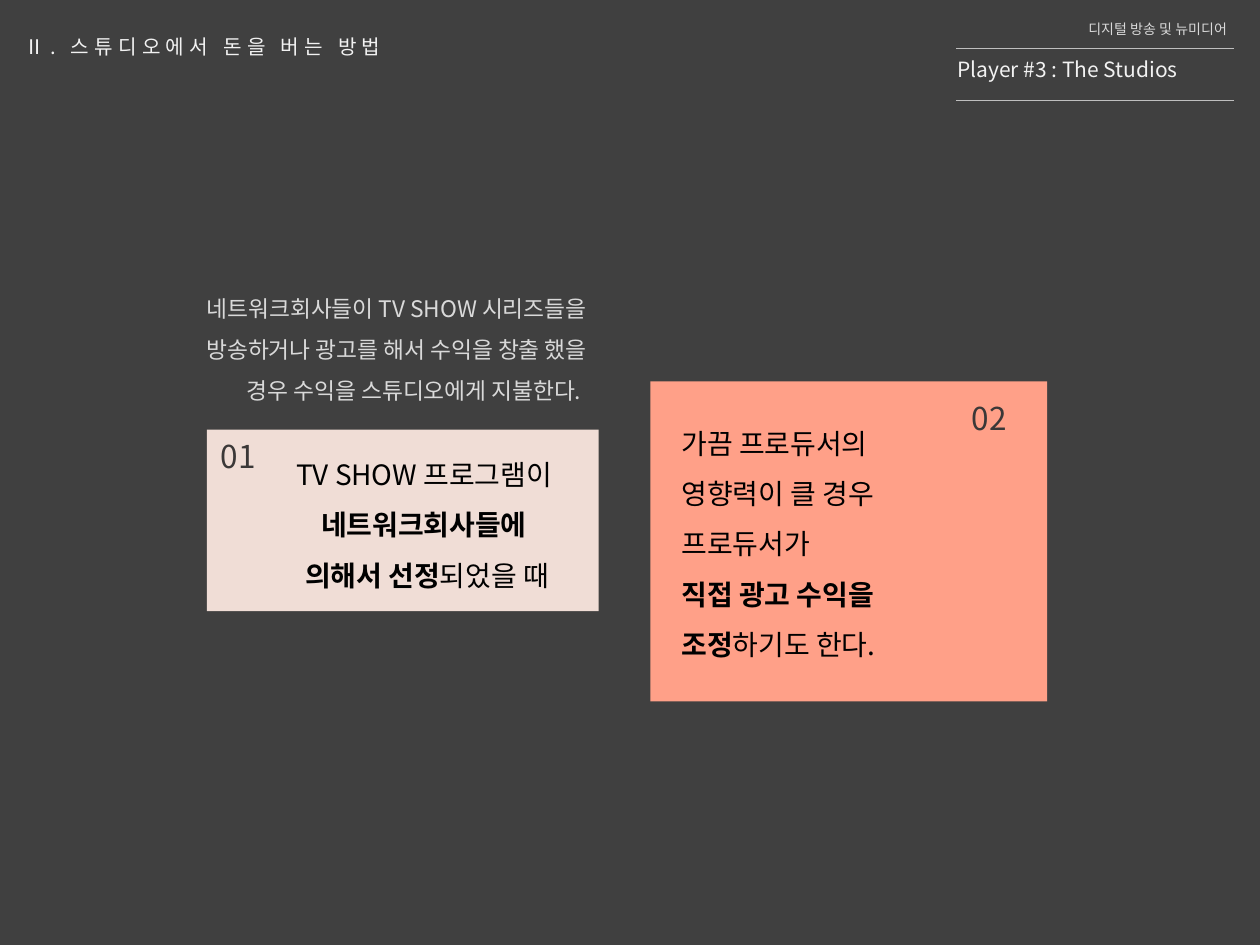
from pptx import Presentation
from pptx.dml.color import RGBColor
from pptx.enum.shapes import MSO_CONNECTOR as Link, MSO_SHAPE as Kind
from pptx.enum.text import MSO_AUTO_SIZE as Fit, PP_ALIGN as Align
from pptx.oxml.ns import qn
from pptx.util import Cm, Pt
from lxml.etree import SubElement

FACE = "Noto Sans CJK KR"


def paint(hue):
    return RGBColor.from_string(hue)


def write(spot, lines, size, hue, align=Align.LEFT, gap=None, wrap=True, track=0):
    frame = slide.shapes.add_textbox(*map(Cm, spot)).text_frame
    frame.word_wrap = wrap
    frame.auto_size = Fit.SHAPE_TO_FIT_TEXT
    for i, (strong, plain) in enumerate(lines):
        para = frame.paragraphs[0] if i == 0 else frame.add_paragraph()
        para.alignment = align
        para.line_spacing = gap
        font = para.font
        font.size = Pt(size)
        font.name = FACE
        font.color.rgb = paint(hue)
        props = para._p.pPr.find(qn("a:defRPr"))
        SubElement(props, qn("a:ea")).set("typeface", FACE)
        if track:
            props.set("spc", str(track))
        for text, bold in ((strong, True), (plain, False)):
            if text:
                run = para.add_run()
                run.text = text
                run.font.bold = bold


deck = Presentation()
deck.slide_width, deck.slide_height = Cm(25.4), Cm(19.05)
slide = deck.slides.add_slide(deck.slide_layouts[6])
back = slide.background.fill
back.solid()
back.fore_color.rgb = paint("404040")

write((0.25, 0.56, 8.43, 0.74), [("", "Ⅱ. 스튜디오에서 돈을 버는 방법")],
      11.5, "F2F2F2", wrap=False, track=300)
write((19.05, 1.02, 5.28, 0.76), [("", "Player #3 : The Studios")],
      12, "F2F2F2", wrap=False)
write((21.69, 0.28, 3.53, 0.61), [("", "디지털 방송 및 뉴미디어")],
      8, "D9D9D9", wrap=False)

for y in (0.98, 2.03):
    rule = slide.shapes.add_connector(Link.STRAIGHT, Cm(19.28), Cm(y), Cm(24.87), Cm(y))
    rule.line.color.rgb = paint("BFBFBF")
    rule.line.width = Pt(0.75)
    SubElement(rule._element.spPr, qn("a:effectLst"))

first = [
    ("", "TV SHOW 프로그램이 "),
    ("네트워크회사들에 ", ""),
    ("의해서 선정", "되었을 때"),
]
second = [
    ("", "가끔 프로듀서의"),
    ("", "영향력이 클 경우"),
    ("", "프로듀서가"),
    ("직접 광고 수익을", ""),
    ("조정", "하기도 한다."),
]
cards = [
    ("01", "F0DDD6", (4.17, 8.66, 7.9, 3.66), (3.71, 8.69, 2.18, 1.02),
     (5.51, 8.76, 6.2, 3.33), first, Align.CENTER),
    ("02", "FFA088", (13.11, 7.69, 8, 6.45), (19.1, 7.92, 1.68, 1.02),
     (13.49, 8.13, 6.22, 5.38), second, Align.LEFT),
]
for label, hue, area, mark, spot, lines, align in cards:
    card = slide.shapes.add_shape(Kind.RECTANGLE, *map(Cm, area))
    card.shadow.inherit = False
    card.fill.solid()
    card.fill.fore_color.rgb = paint(hue)
    card.line.fill.background()
    write(spot, lines, 16, "000000", align, 1.5)
    write(mark, [("", label)], 18, "3B3838", Align.CENTER)

story = ("네트워크회사들이 TV SHOW 시리즈들을 방송하거나 광고를 해서 "
         "수익을 창출 했을 경우 수익을 스튜디오에게 지불한다. ")
write((3.1, 5.54, 8.97, 2.77), [("", story)], 13, "D9D9D9", Align.RIGHT, 1.5)

deck.save("out.pptx")
